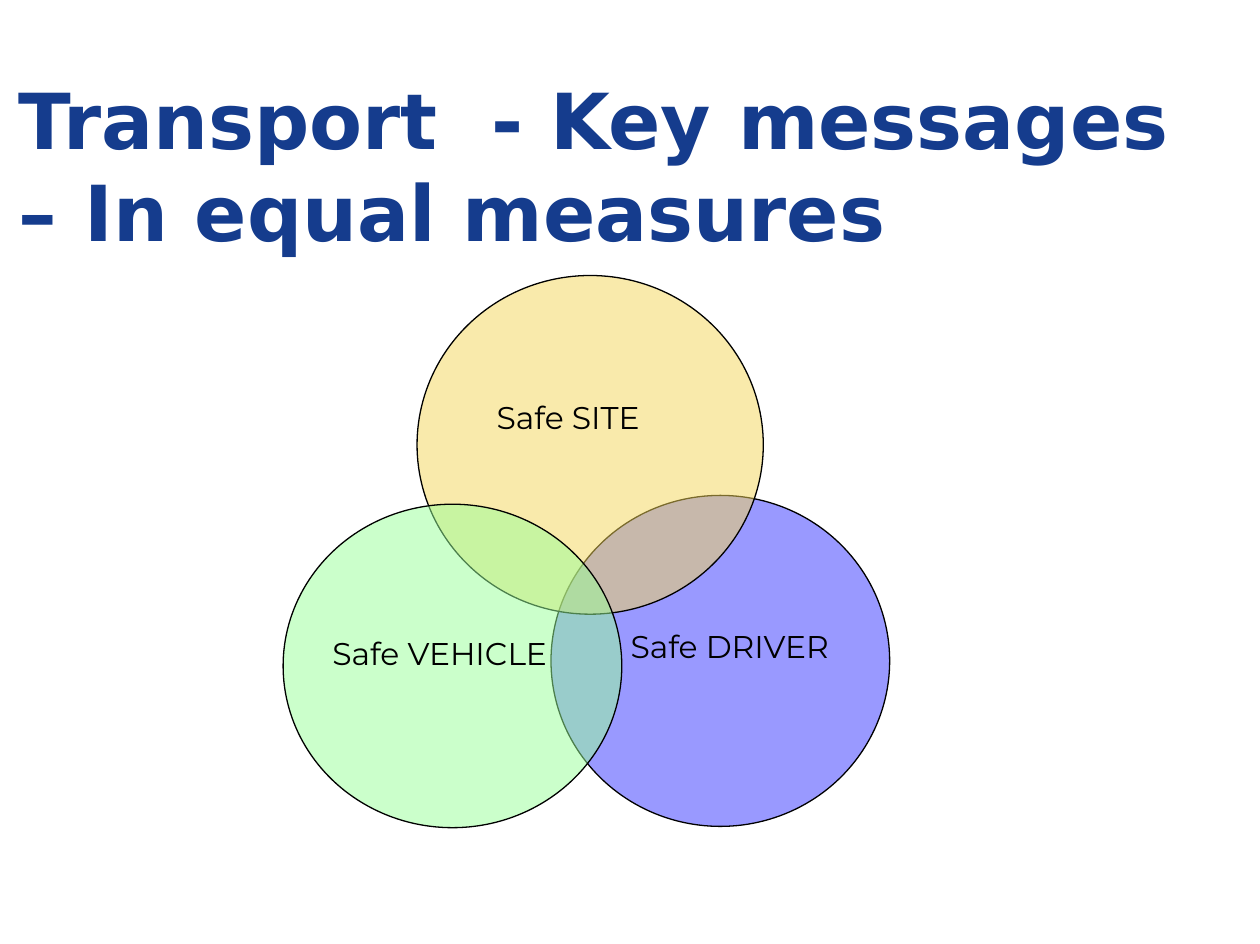
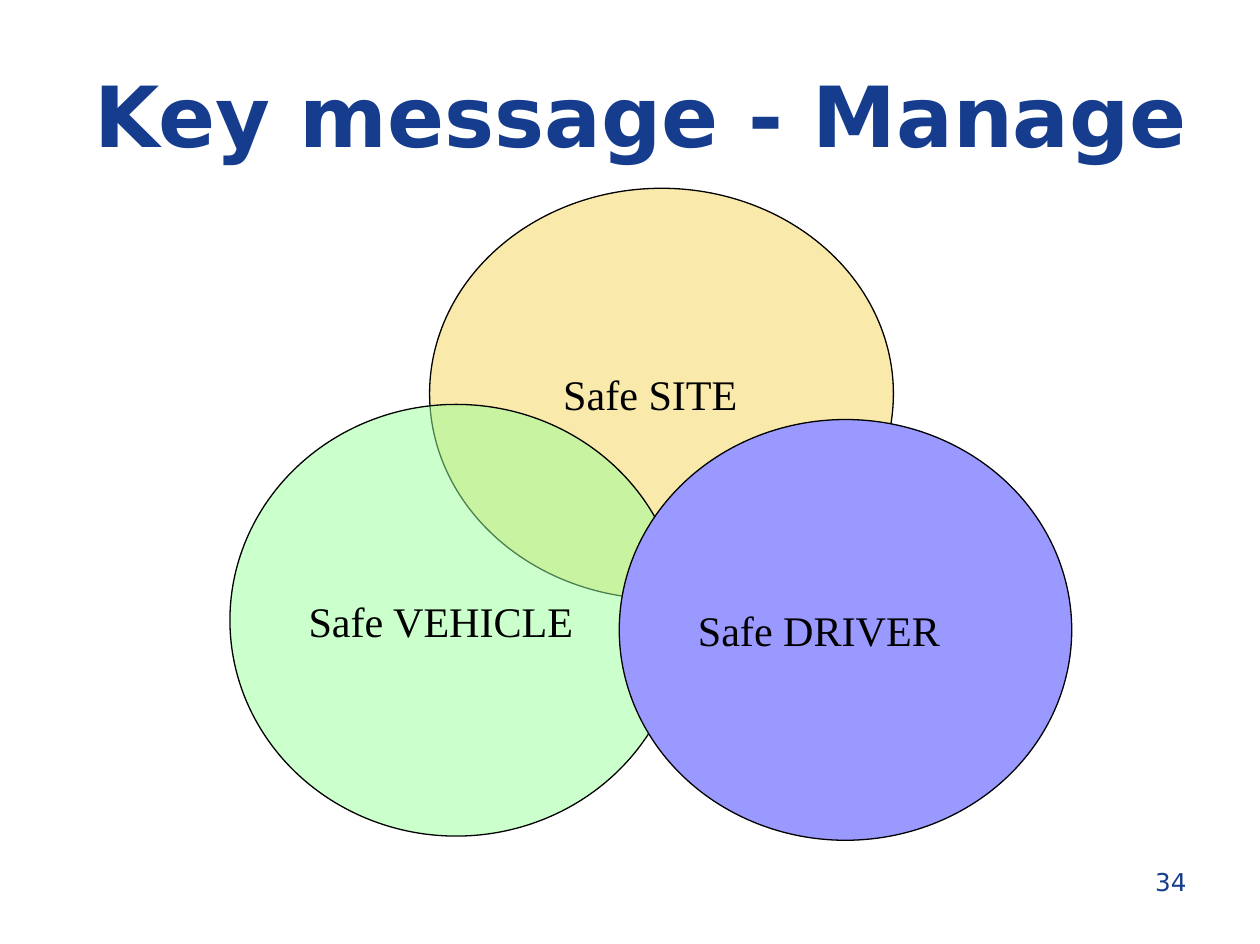
from lxml import etree
from pptx import Presentation
from pptx import util as u
from pptx.dml.color import RGBColor
from pptx.enum import shapes, text
from pptx.oxml import ns

COLORS = {"title": "153C8D", "ink": "000000", "site": "F5D759",
          "vehicle": "99FF99", "driver": "9999FF"}
HEADING, LABEL, SERIF = "DejaVu Sans", "Montserrat", "Times New Roman"
COLS, ROWS = 100, 75


class Deck:
    """Holds the style and the current slide; boxes are (col, row, cols, rows)."""

    def __init__(self):
        self.prs = Presentation()
        self.prs.slide_width, self.prs.slide_height = u.Inches(9.97), u.Inches(7.47)
        self.s = None

    def new_slide(self):
        self.s = self.prs.slides.add_slide(self.prs.slide_layouts[6])

    def place(self, box):
        dx, dy = self.prs.slide_width / COLS, self.prs.slide_height / ROWS
        x, y, w, h = box
        return round(x * dx), round(y * dy), round(w * dx), round(h * dy)

    def set_text(self, tf, words, font, size, color="ink", bold=False):
        tf.word_wrap = True
        p = tf.paragraphs[0]
        p.text = words
        p.alignment = text.PP_ALIGN.LEFT
        p.font.name, p.font.size, p.font.bold = font, u.Pt(size), bold
        p.font.color.rgb = RGBColor.from_string(COLORS[color])
        return p

    def text_box(self, words, box, font, size, margins=(0, 0), **style):
        tf = self.s.shapes.add_textbox(*self.place(box)).text_frame
        tf.margin_left = tf.margin_right = u.Inches(margins[0])
        tf.margin_top = tf.margin_bottom = u.Inches(margins[1])
        return self.set_text(tf, words, font, size, **style)

    def title(self, words, box, size):
        self.text_box(words, box, HEADING, size, color="title", bold=True)

    def label(self, words, col, row, cols):
        self.text_box(words, (col, row, cols, 3.8), LABEL, 17.9, margins=(0.07, 0.04))

    def page_number(self, number):
        p = self.text_box(number, (91.68, 68.88, 3.3, 2.5), HEADING, 14, color="title")
        p.line_spacing = u.Pt(16.8)

    def circle(self, color, box, words="", opacity=100, indent=0.1):
        sp = self.s.shapes.add_shape(shapes.MSO_SHAPE.OVAL, *self.place(box))
        sp.shadow.inherit = False
        sp.fill.solid()
        sp.fill.fore_color.rgb = RGBColor.from_string(COLORS[color])
        if opacity < 100:
            fill_color = sp.element.spPr.find(ns.qn("a:solidFill"))[0]
            etree.SubElement(fill_color, ns.qn("a:alpha"), val=str(opacity * 1000))
        sp.line.color.rgb = RGBColor.from_string(COLORS["ink"])
        sp.line.width = u.Pt(0.75)
        if words:
            tf = sp.text_frame
            tf.vertical_anchor = text.MSO_ANCHOR.MIDDLE
            tf.margin_left = u.Inches(indent)
            self.set_text(tf, words, SERIF, 24)


def equal_measures(deck):
    deck.new_slide()
    deck.circle("driver", (43.73, 39.36, 26.88, 26.3))
    deck.title("Transport  - Key messages – In equal measures",
               (1.5, 5.72, 93.58, 22.29), 44)
    deck.circle("site", (33.1, 21.89, 27.48, 26.91), opacity=50)
    deck.circle("vehicle", (22.47, 40.06, 26.88, 25.7), opacity=50)
    deck.label("Safe VEHICLE", 25.68, 50, 22.47)
    deck.label("Safe DRIVER", 49.35, 49.4, 21.26)
    deck.label("Safe SITE", 38.72, 31.22, 18.76)


def manage(deck):
    deck.new_slide()
    deck.title("Key message - Manage", (7.52, 5.02, 90.27, 8.23), 48)
    deck.page_number("34")
    deck.circle("site", (34.1, 14.96, 36.81, 32.63), "Safe SITE", opacity=50, indent=0.52)
    deck.circle("vehicle", (18.25, 32.13, 35.91, 34.3), "Safe VEHICLE", opacity=50)
    deck.circle("driver", (49.15, 33.33, 35.91, 33.43), "Safe DRIVER")


def main():
    deck = Deck()
    equal_measures(deck)
    manage(deck)
    deck.prs.save("out.pptx")


if __name__ == "__main__":
    main()
